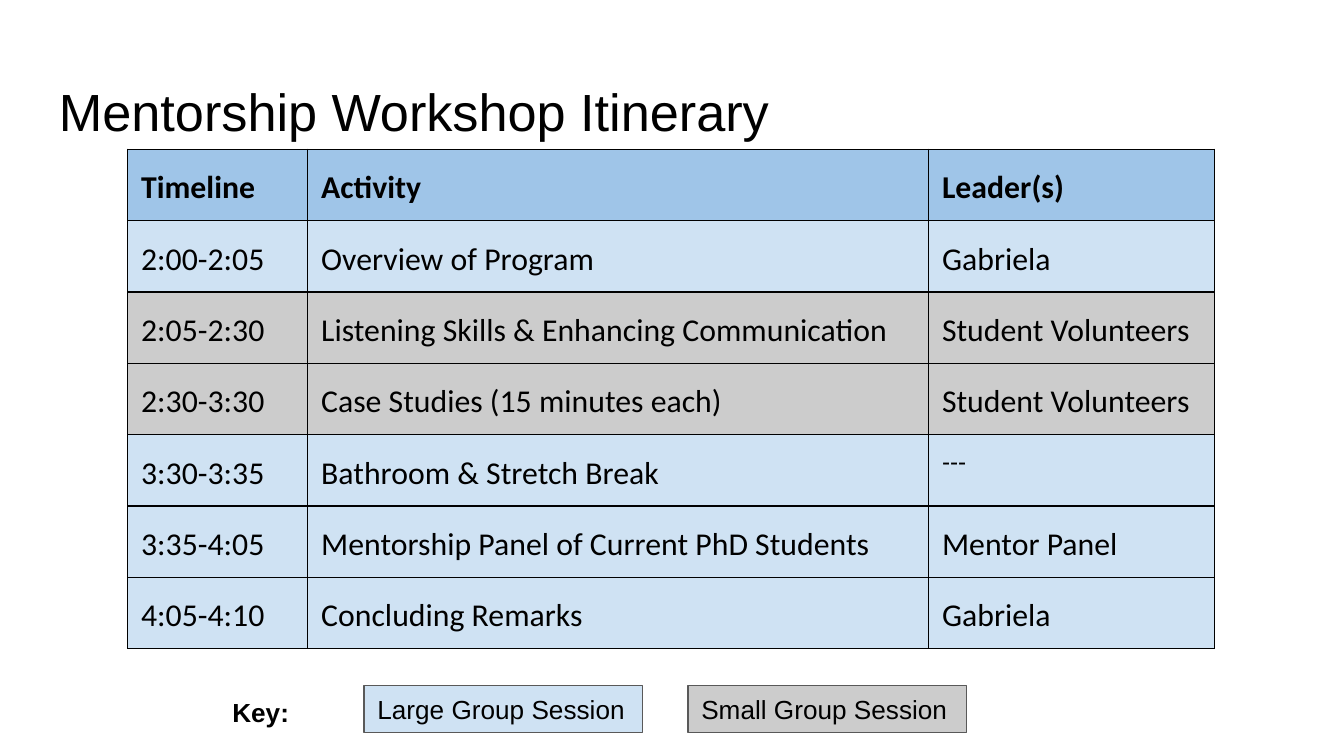
import pptx
import pptx.dml.color
import pptx.enum.shapes
import pptx.enum.text
import pptx.oxml
import pptx.oxml.ns
import pptx.util

Inches = pptx.util.Inches
Color = pptx.dml.color.RGBColor.from_string
Anchor = pptx.enum.text.MSO_ANCHOR

theme = {
    "ink": "000000", "outline": "595959", "header": "9FC5E8",
    "large": "CFE2F3", "small": "CCCCCC", "line": 0.75,
    "title": {"name": "Arial", "size": pptx.util.Pt(28), "bold": False},
    "heading": {"name": "Calibri", "size": pptx.util.Pt(17), "bold": True},
    "body": {"name": "Calibri", "size": pptx.util.Pt(17), "bold": False},
    "dash": {"name": "Arial", "size": pptx.util.Pt(13), "bold": False},
    "key": {"name": "Arial", "size": pptx.util.Pt(14), "bold": False},
    "key_label": {"name": "Arial", "size": pptx.util.Pt(14), "bold": True},
}
margins = {f"margin_{side}": Inches(0.1) for side in ("left", "top", "right", "bottom")}


def write(frame, text, style, spacing=1.0):
    para = frame.paragraphs[0]
    para.alignment = pptx.enum.text.PP_ALIGN.LEFT
    para.line_spacing = spacing
    span = para.add_run()
    span.text = text
    for name, value in theme[style].items():
        setattr(span.font, name, value)
    span.font.color.rgb = Color(theme["ink"])


def set_borders(cell):
    properties = cell._tc.get_or_add_tcPr()
    for position, side in enumerate(("lnL", "lnR", "lnT", "lnB")):
        border = pptx.oxml.parse_xml(
            f'<a:{side} {pptx.oxml.ns.nsdecls("a")} w="{pptx.util.Pt(theme["line"])}">'
            f'<a:solidFill><a:srgbClr val="{theme["ink"]}"/></a:solidFill></a:{side}>'
        )
        properties.insert(position, border)


deck = pptx.Presentation()
deck.slide_width, deck.slide_height = Inches(10), Inches(10 * 9 / 16)
page = deck.slides.add_slide(deck.slide_layouts[6])

labels = [
    ("Mentorship Workshop Itinerary", "title", 0.34, 0.49, 9.32, 0.63),
    ("Key:", "key_label", 1.63, 5.08, 1.08, 0.35),
]
for text, style, *bounds in labels:
    box = page.shapes.add_textbox(*map(Inches, bounds))
    frame_format = {**margins, "word_wrap": True, "vertical_anchor": Anchor.TOP}
    for name, value in frame_format.items():
        setattr(box.text_frame, name, value)
    write(box.text_frame, text, style)

itinerary = [
    ("header", "Timeline", "Activity", "Leader(s)"),
    ("large", "2:00-2:05", "Overview of Program", "Gabriela"),
    ("small", "2:05-2:30", "Listening Skills & Enhancing Communication", "Student Volunteers"),
    ("small", "2:30-3:30", "Case Studies (15 minutes each)", "Student Volunteers"),
    ("large", "3:30-3:35", "Bathroom & Stretch Break", "---"),
    ("large", "3:35-4:05", "Mentorship Panel of Current PhD Students", "Mentor Panel"),
    ("large", "4:05-4:10", "Concluding Remarks", "Gabriela"),
]
column_widths = [1.34, 4.62, 2.13]
table_height = 3.72
table = page.shapes.add_table(
    len(itinerary), len(column_widths), Inches(0.95), Inches(1.11),
    Inches(sum(column_widths)), Inches(table_height),
).table
for column, width in zip(table.columns, column_widths):
    column.width = Inches(width)
for row, (session, *texts) in zip(table.rows, itinerary):
    row.height = Inches(table_height / len(itinerary))
    for cell, text in zip(row.cells, texts):
        for name, value in {**margins, "vertical_anchor": Anchor.TOP}.items():
            setattr(cell, name, value)
        cell.fill.solid()
        cell.fill.fore_color.rgb = Color(theme[session])
        set_borders(cell)
        if text == "---":
            write(cell.text_frame, text, "dash")
        else:
            write(cell.text_frame, text, "heading" if session == "header" else "body", 1.15)

key_entries = [("large", "Large Group Session"), ("small", "Small Group Session")]
for index, (session, text) in enumerate(key_entries):
    box = page.shapes.add_shape(
        pptx.enum.shapes.MSO_SHAPE.RECTANGLE,
        Inches(2.71 + 2.41 * index), Inches(5.1), Inches(2.07), Inches(0.35),
    )
    box.shadow.inherit = False
    box.fill.solid()
    box.fill.fore_color.rgb = Color(theme[session])
    box.line.color.rgb = Color(theme["outline"])
    box.line.width = pptx.util.Pt(theme["line"])
    frame_format = {**margins, "word_wrap": True, "vertical_anchor": Anchor.MIDDLE}
    for name, value in frame_format.items():
        setattr(box.text_frame, name, value)
    write(box.text_frame, text, "key")

deck.save("out.pptx")
